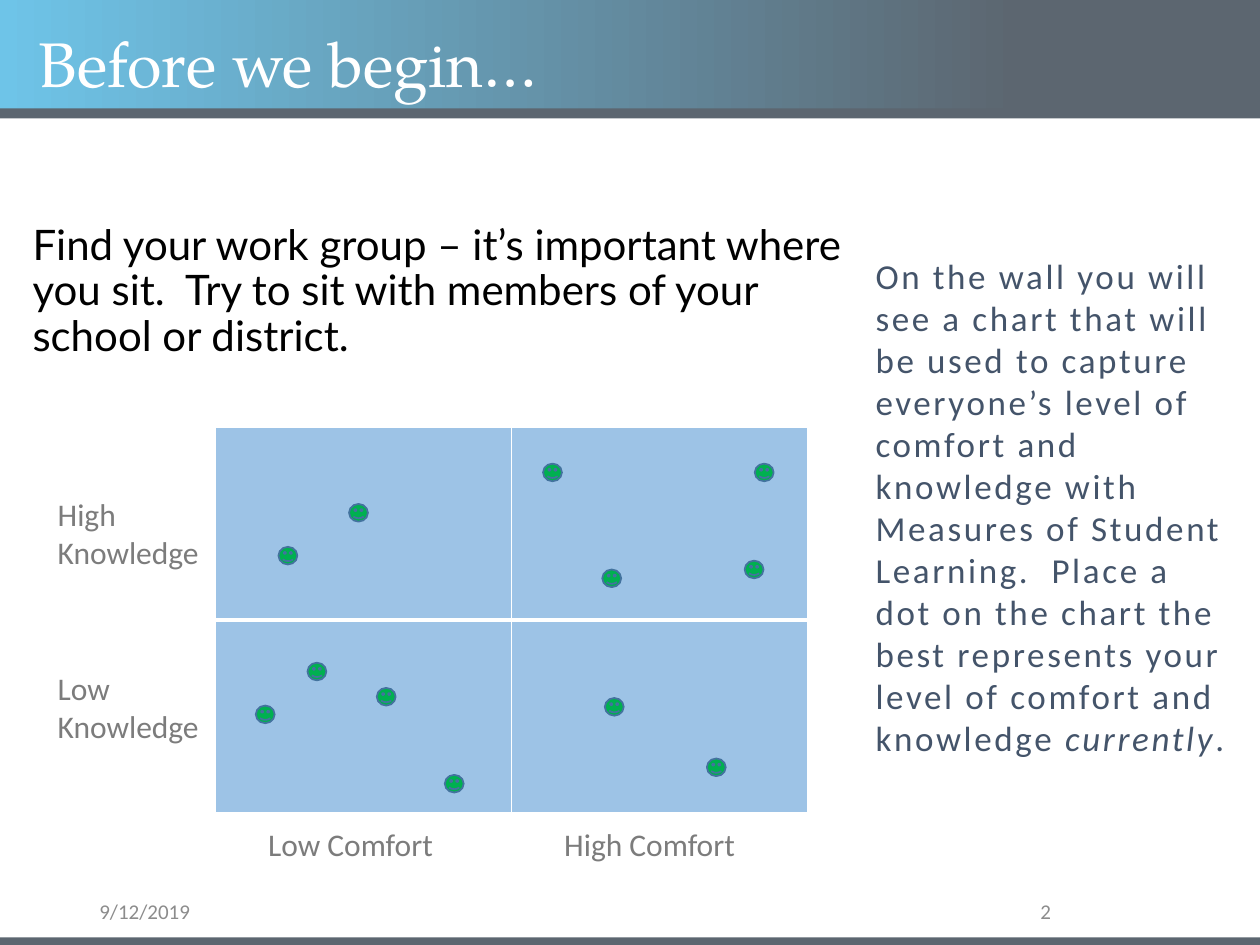
"""Build the opening slide with a comfort and knowledge grid."""
import pptx
import pptx.dml.color
import pptx.enum.shapes
import pptx.enum.text
import pptx.oxml
import pptx.oxml.ns
import pptx.util

Inches = pptx.util.Inches
Pt = pptx.util.Pt
SHAPES = pptx.enum.shapes.MSO_SHAPE
ALIGN = pptx.enum.text.PP_ALIGN
ANCHOR = pptx.enum.text.MSO_ANCHOR

SLATE = "5C6670"
SKY = "6EC4E8"
WHITE = "FFFFFF"
LABEL = {"size": Pt(18), "name": "Calibri"}
FOOTER = {"size": Pt(12), "name": "Calibri"}
DOTS = [
    (2.03, 5.6), (5.91, 4.45), (2.21, 4.34), (4.8, 5.54),
    (2.44, 5.26), (2.77, 4), (3.53, 6.15), (4.78, 4.52),
    (5.99, 3.68), (4.31, 3.68), (5.61, 6.02), (2.99, 5.46),
]


def color(value):
    return pptx.dml.color.RGBColor.from_string(value)


class SlideBuilder:
    def __init__(self, slide):
        self.slide = slide

    def shape(self, kind, box, fill, line=None):
        shape = self.slide.shapes.add_shape(kind, *map(Inches, box))
        shape.shadow.inherit = False
        shape.fill.solid()
        shape.fill.fore_color.rgb = color(fill)
        if line:
            shape.line.color.rgb = color(line)
            shape.line.width = Pt(1)
        else:
            shape.line.fill.background()
        return shape

    def gradient_bar(self, box, stops):
        shape = self.shape(SHAPES.RECTANGLE, box, SLATE)
        shape.fill.gradient()
        shape.fill.gradient_angle = 0
        for stop, (position, value) in zip(shape.fill.gradient_stops, stops):
            stop.position = position
            stop.color.rgb = color(value)

    def text(self, box, runs, font, ink, layout=None, anchor=ANCHOR.TOP, indent=0, tracking=0):
        shape = self.slide.shapes.add_textbox(*map(Inches, box))
        frame = shape.text_frame
        frame.word_wrap = True
        frame.vertical_anchor = anchor
        paragraph = frame.paragraphs[0]
        if indent:
            paragraph._p.get_or_add_pPr().set("marL", str(Inches(indent)))
        for name, value in (layout or {}).items():
            setattr(paragraph, name, value)
        for words, changes in runs:
            run = paragraph.add_run()
            run.text = words
            for name, value in {**font, **changes}.items():
                setattr(run.font, name, value)
            run.font.color.rgb = color(ink)
            if tracking:
                run._r.get_or_add_rPr().set("spc", str(int(tracking * 100)))

    def border(self, cell, side, width):
        properties = cell._tc.get_or_add_tcPr()
        line = pptx.oxml.parse_xml(
            f'<a:{side} {pptx.oxml.ns.nsdecls("a")} w="{Pt(width)}">'
            f'<a:solidFill><a:srgbClr val="{WHITE}"/></a:solidFill></a:{side}>'
        )
        properties.append(line)

    def grid(self, box, rows, columns, fill):
        frame = self.slide.shapes.add_table(rows, columns, *map(Inches, box))
        table = frame.table
        for row in range(rows):
            for column in range(columns):
                cell = table.cell(row, column)
                widths = {
                    "lnL": 1,
                    "lnR": 1,
                    "lnT": 3 if row else 1,
                    "lnB": 3 if row < rows - 1 else 1,
                }
                for side, width in widths.items():
                    self.border(cell, side, width)
                cell.fill.solid()
                cell.fill.fore_color.rgb = color(fill)


def main():
    presentation = pptx.Presentation()
    presentation.slide_width = Inches(10)
    presentation.slide_height = Inches(7.5)
    builder = SlideBuilder(presentation.slides.add_slide(presentation.slide_layouts[6]))

    builder.gradient_bar((0, 0, 10, 0.87), [(0, SKY), (0.81, SLATE)])
    for top in (0.86, 7.44):
        builder.shape(SHAPES.RECTANGLE, (0, top, 10, 0.08), SLATE)
    for left, width, words, alignment in (
        (0.69, 2.25, "9/12/2019", ALIGN.LEFT),
        (7.06, 1.38, "2", ALIGN.RIGHT),
    ):
        builder.text((left, 7.12, width, 0.23), [(words, {})], FOOTER, "8C8C8C",
                     {"alignment": alignment}, ANCHOR.MIDDLE)

    builder.text((0.21, 0.21, 8.62, 0.57), [("Before we begin…", {})],
                 {"size": Pt(36), "name": "TeX Gyre Pagella"}, WHITE, {"line_spacing": 0.9})
    builder.text(
        (0.11, 1.73, 6.85, 1.33),
        [("Find your work group – it’s important where you sit.  "
          "Try to sit with members of your school or district.", {})],
        {"size": Pt(24), "name": "Lato"}, "000000", {"line_spacing": 0.9}, indent=0.05)

    builder.grid((1.71, 3.39, 4.7, 3.06), 2, 2, "9DC3E6")
    for words, box in (
        ("High Knowledge", (0.36, 3.88, 1.37, 0.71)),
        ("Low Knowledge", (0.36, 5.26, 1.49, 0.71)),
        ("Low Comfort", (2.03, 6.5, 1.94, 0.4)),
        ("High Comfort", (4.38, 6.5, 1.94, 0.4)),
    ):
        builder.text(box, [(words, {})], LABEL, "7C7C7C")

    builder.text(
        (6.85, 1.97, 3.05, 4.14),
        [("On the wall you will see a chart that will be used to capture everyone’s "
          "level of comfort and knowledge with Measures of Student Learning.  Place a "
          "dot on the chart the best represents your level of comfort and knowledge ", {}),
         ("currently", {"italic": True}),
         (".", {})],
        {"size": Pt(20), "name": "Calibri"}, "44546A", tracking=1.5)

    for left, top in DOTS:
        builder.shape(SHAPES.SMILEY_FACE, (left, top, 0.15, 0.14), "00B050", "43739E")
    presentation.save("out.pptx")


if __name__ == "__main__":
    main()
